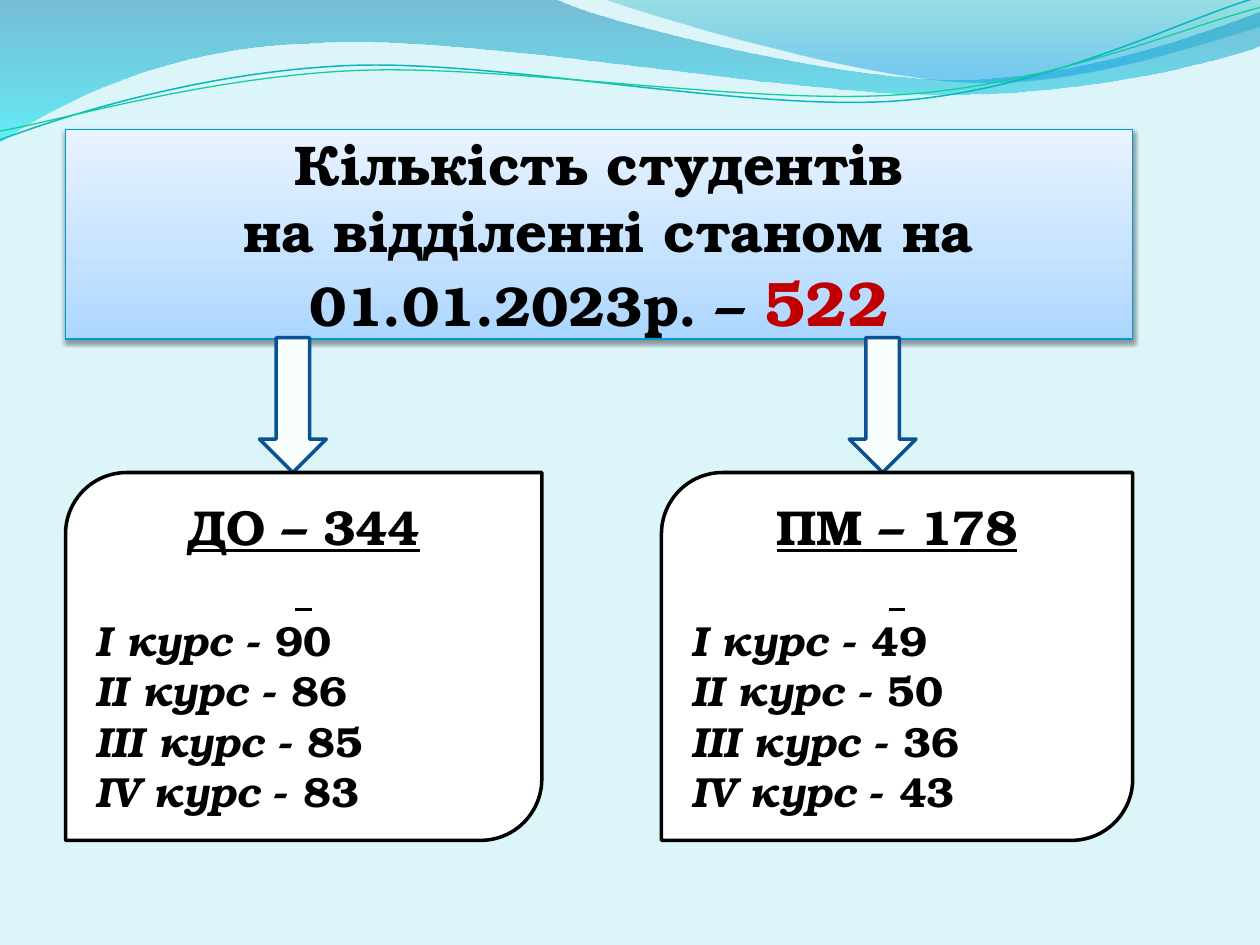
import dataclasses
import math
import typing

import lxml.etree
import pptx
import pptx.dml.color
import pptx.enum.shapes
import pptx.enum.text
import pptx.oxml
import pptx.oxml.ns
import pptx.util

RGB = pptx.dml.color.RGBColor
KIND = pptx.enum.shapes.MSO_SHAPE
ALIGN = pptx.enum.text.PP_ALIGN
Pt = pptx.util.Pt
qn = pptx.oxml.ns.qn

BLACK, WHITE = RGB(0, 0, 0), RGB(255, 255, 255)
PALE = RGB(0xDB, 0xF5, 0xF9)
RED = RGB(0xC0, 0, 0)
ICE, NAVY = RGB(0xF8, 0xFD, 0xFE), RGB(0x0B, 0x52, 0x92)
SKY, AZURE = RGB(0, 0x9A, 0xD4), RGB(0, 0x99, 0xE4)
TEAL, GREEN = RGB(0x09, 0xB6, 0xBE), RGB(0x10, 0xCF, 0x9B)
DEEP, CYAN, SEA = RGB(0, 0x79, 0xAD), RGB(0, 0xE9, 0xF7), RGB(0, 0xAB, 0xB4)
FONT = "TeX Gyre Bonum"

# The slide is a grid of 10 columns and 7.5 rows.
WIDTH, HEIGHT = pptx.util.Inches(10), pptx.util.Inches(7.5)
COL, ROW = WIDTH / 10, HEIGHT / 7.5
LEFT, RIGHT = 0.52, 8.99
TOP, BASE, CARD_TOP, CARD_END = 1.03, 2.69, 3.75, 6.67
TILT = -2.7

Point = tuple[float, float]


class Stop(typing.NamedTuple):
    share: int
    color: RGB
    alpha: int = 100


@dataclasses.dataclass
class Wave:
    """A start point, then curves of three points and straight legs of one."""
    start: Point
    legs: list[tuple[Point, ...]]
    stops: tuple[Stop, ...] = ()
    line: RGB | None = None
    weight: float = 0
    pivot: Point | None = None


@dataclasses.dataclass
class Card:
    left: float
    right: float
    arrow: float
    title: str
    groups: tuple[tuple[tuple[str, int], ...], ...]


WAVES = [
    Wave((0, 0), [
        ((4.4, -0.01),),
        ((4.76, 0.17), (6.64, 0.63), (7.58, 0.63)),
        ((8.53, 0.63), (9.58, 0.26), (10, 0.09)),
        ((10.01, 0.36),),
        ((9.83, 0.44), (8.7, 0.76), (7.46, 0.75)),
        ((6.22, 0.75), (3.82, 0.28), (2.57, 0.34)),
        ((1.29, 0.36), (0.46, 0.83), (-0.01, 1.13)),
    ], stops=(Stop(0, DEEP, 45), Stop(100, CYAN, 55))),
    Wave((4.79, -0.01), [
        ((5.09, 0.11), (6.82, 0.62), (7.69, 0.65)),
        ((8.56, 0.69), (9.61, 0.32), (10, 0.21)),
        ((10, 0),),
    ], stops=(Stop(0, SEA, 30), Stop(80, AZURE, 45), Stop(100, AZURE, 45))),
    Wave((0, 1.11), [
        ((0.48, 0.93), (1.58, 0.57), (2.77, 0.52)),
        ((3.95, 0.47), (5.93, 0.89), (7.13, 0.8)),
        ((8.33, 0.71), (9.38, 0.15), (9.98, -0.02)),
    ], line=TEAL, weight=0.85, pivot=(4.99, 0.58)),
    Wave((0, 1.04), [
        ((0.47, 0.96), (1.64, 0.61), (2.83, 0.56)),
        ((4.03, 0.51), (5.97, 0.84), (7.17, 0.75)),
        ((8.36, 0.67), (9.41, 0.21), (10, 0.06)),
    ], line=GREEN, weight=0.75, pivot=(5, 0.59)),
]
CARDS = [
    Card(LEFT, 4.3, 2.06, "ДО – 344",
         ((("І", 90), ("ІІ", 86), ("III", 85)), (("IV", 83),))),
    Card(5.25, RIGHT, 6.74, "ПМ – 178",
         ((("І", 49), ("ІІ", 50), ("III", 36), ("IV", 43)),)),
]


def shade(shape, stops: tuple[Stop, ...], angle: int) -> None:
    """Fill with a linear gradient; the angle runs clockwise."""
    shape.fill.background()
    blank = shape._element.spPr.find(qn("a:noFill"))
    marks = "".join(
        f'<a:gs pos="{s.share * 1000}"><a:srgbClr val="{s.color}">'
        f'<a:alpha val="{s.alpha * 1000}"/></a:srgbClr></a:gs>' for s in stops)
    blank.getparent().replace(blank, pptx.oxml.parse_xml(
        f'<a:gradFill {pptx.oxml.ns.nsdecls("a")} rotWithShape="1">'
        f'<a:gsLst>{marks}</a:gsLst>'
        f'<a:lin ang="{angle * 60000}" scaled="0"/></a:gradFill>'))


def cast(shape) -> None:
    """Drop a soft shadow straight below the shape."""
    drop = lxml.etree.SubElement(
        shape._element.spPr.find(qn("a:effectLst")), qn("a:outerShdw"),
        blurRad=str(Pt(3.1)), dist=str(Pt(1.6)), dir="5400000",
        rotWithShape="0")
    tint = lxml.etree.SubElement(drop, qn("a:srgbClr"), val=str(BLACK))
    lxml.etree.SubElement(tint, qn("a:alpha"), val="38000")


def turn(point: Point, pivot: Point, angle: float) -> Point:
    """Rotate a point clockwise, in degrees, about the pivot."""
    cos, sin = math.cos(math.radians(angle)), math.sin(math.radians(angle))
    dx, dy = point[0] - pivot[0], point[1] - pivot[1]
    return pivot[0] + dx * cos - dy * sin, pivot[1] + dx * sin + dy * cos


def bend(shape, legs: list[tuple[Point, ...]]) -> None:
    """Join the straight segments of each three-point leg into one curve."""
    lines = iter(list(shape._element.iter(qn("a:lnTo"))))
    for leg in legs:
        parts = [next(lines) for _ in leg]
        if len(leg) == 3:
            curve = lxml.etree.Element(qn("a:cubicBezTo"))
            parts[0].addprevious(curve)
            for part in parts:
                curve.append(part[0])
                part.getparent().remove(part)


def draw_wave(slide, wave: Wave) -> None:
    trail = [wave.start, *(point for leg in wave.legs for point in leg)]
    if wave.pivot:
        trail = [turn(point, wave.pivot, -TILT) for point in trail]
    spots = [(x * COL, y * ROW) for x, y in trail]
    pen = slide.shapes.build_freeform(*spots[0])
    pen.add_line_segments(spots[1:], close=bool(wave.stops))
    shape = pen.convert_to_shape()
    bend(shape, wave.legs)
    shape.shadow.inherit = False
    if wave.stops:
        shade(shape, wave.stops, 90)
        shape.line.fill.background()
    else:
        shape.rotation = TILT
        shape.fill.background()
        shape.line.color.rgb = wave.line
        shape.line.width = Pt(wave.weight)


def add_box(slide, kind: KIND, left: float, top: float, right: float,
            end: float, fill: RGB, line: RGB, weight: float):
    shape = slide.shapes.add_shape(
        kind, round(left * COL), round(top * ROW),
        round((right - left) * COL), round((end - top) * ROW))
    shape.shadow.inherit = False
    shape.fill.solid()
    shape.fill.fore_color.rgb = fill
    shape.line.color.rgb = line
    shape.line.width = Pt(weight)
    shape.text_frame.word_wrap = True
    shape.text_frame.vertical_anchor = pptx.enum.text.MSO_ANCHOR.MIDDLE
    return shape


def add_para(frame, size: int, align: ALIGN, text: str = "",
             under: bool = False):
    para = frame.paragraphs[0] if not frame.text else frame.add_paragraph()
    para.alignment = align
    font = para.font
    font.name, font.size, font.bold = FONT, Pt(size), True
    font.underline = under
    font.color.rgb = BLACK
    if text:
        para.add_run().text = text
    return para


def draw_title(slide) -> None:
    box = add_box(slide, KIND.FLOWCHART_PROCESS, LEFT, TOP, RIGHT, BASE,
                  WHITE, SKY, 0.75)
    shade(box, (Stop(0, RGB(0xAB, 0xD6, 0xFF)), Stop(35, RGB(0xC3, 0xE1, 0xFF)),
                Stop(100, RGB(0xE8, 0xF3, 0xFF))), 270)
    cast(box)
    frame = box.text_frame
    add_para(frame, 32, ALIGN.CENTER, "Кількість студентів")
    para = add_para(frame, 32, ALIGN.CENTER,
                    " на відділенні станом на 01.01.2023р. – ")
    total = para.add_run()
    total.text = "522"
    total.font.size = Pt(36)
    total.font.color.rgb = RED


def draw_card(slide, card: Card) -> None:
    box = add_box(slide, KIND.ROUND_2_DIAG_RECTANGLE, card.left, CARD_TOP,
                  card.right, CARD_END, WHITE, BLACK, 2)
    frame = box.text_frame
    add_para(frame, 28, ALIGN.CENTER, card.title, under=True)
    add_para(frame, 28, ALIGN.CENTER, " ", under=True)  # short rule
    for group in card.groups:
        para = add_para(frame, 24, ALIGN.LEFT)
        for place, (year, count) in enumerate(group):
            if place:
                para.add_line_break()
            name = para.add_run()
            name.text = f"{year} курс "
            name.font.italic = True
            para.add_run().text = f"- {count}"


def main() -> None:
    deck = pptx.Presentation()
    deck.slide_width, deck.slide_height = WIDTH, HEIGHT
    slide = deck.slides.add_slide(deck.slide_layouts[6])
    slide.background.fill.solid()
    slide.background.fill.fore_color.rgb = PALE
    for wave in WAVES:
        draw_wave(slide, wave)
    draw_title(slide)
    for card in CARDS:
        add_box(slide, KIND.DOWN_ARROW, card.arrow, BASE - 0.01,
                card.arrow + 0.53, CARD_TOP, ICE, NAVY, 2)
    for card in CARDS:
        draw_card(slide, card)
    deck.save("out.pptx")


if __name__ == "__main__":
    main()
